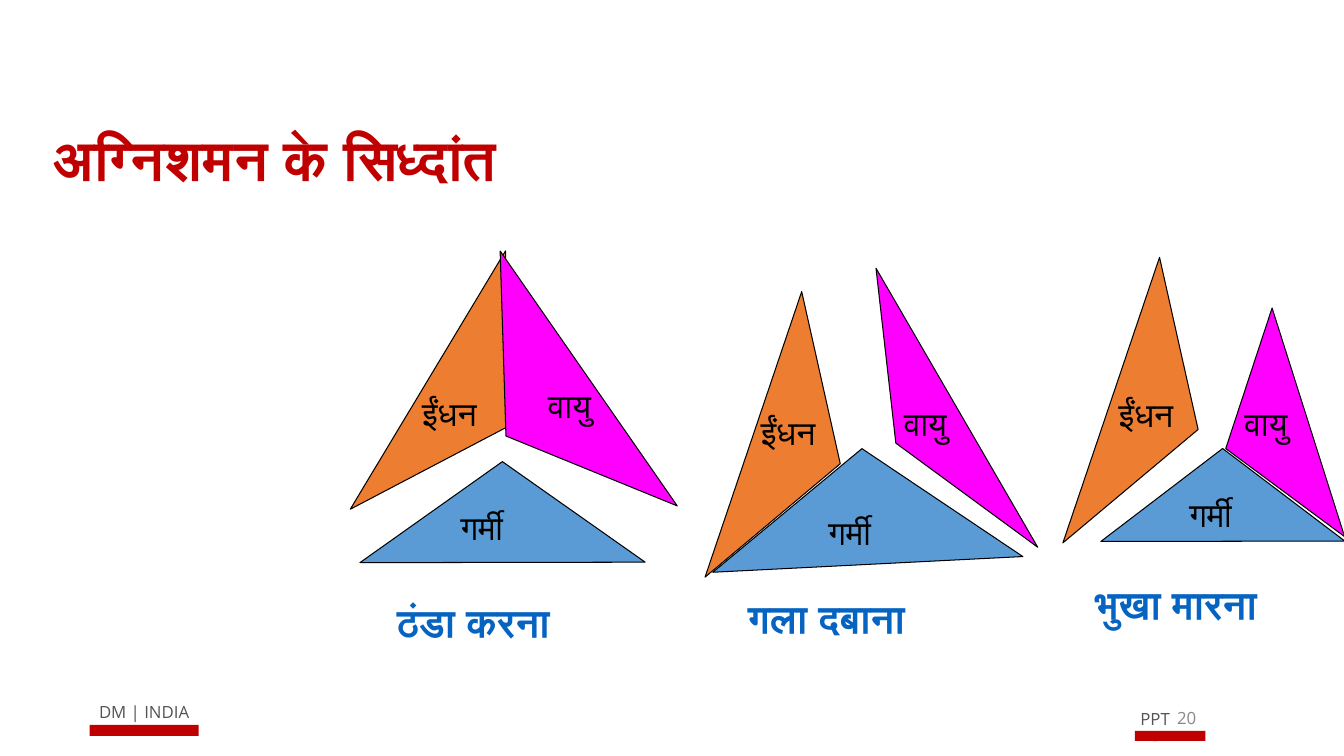
import pptx
import pptx.util
from collections import namedtuple
from dataclasses import dataclass
from pptx.dml.color import RGBColor
from pptx.enum.shapes import MSO_SHAPE
from pptx.enum.text import MSO_ANCHOR, PP_ALIGN

Box = namedtuple("Box", "left top width height")
Side = namedtuple("Side", "element box angle label_at")
Panel = namedtuple("Panel", "caption caption_box sides")

CELL = 0.1
COLUMNS, ROWS = 133.33, 75


@dataclass(frozen=True)
class Theme:
    """Colours, fonts and type sizes of the slide."""
    red: str = "C00000"
    blue: str = "0563C1"
    black: str = "000000"
    white: str = "FFFFFF"
    footer_grey: str = "535353"
    number_grey: str = "888888"
    heading_font: str = "Open Sans"
    label_font: str = "Roboto"
    title_size: int = 40
    caption_size: int = 28
    label_size: int = 24
    footer_size: int = 12
    outline: float = 0.75


THEME = Theme()
ELEMENTS = {
    "fuel": ("ईंधन", "ED7D31", 11.7),
    "air": ("वायु", "FF00FF", 8.3),
    "heat": ("गर्मी", "5B9BD5", 10.8),
}
PANELS = [
    Panel("ठंडा करना", Box(3.4, 34.9, 25, 5.7), [
        Side("heat", Box(0.7, 21.8, 28.3, 10), 359.9, (9.7, 25.8)),
        Side("fuel", Box(-3.6, 11.5, 29.9, 9.1), 121, (5.9, 14.5)),
        Side("air", Box(3.9, 11.4, 30.8, 10), 235.2, (18.4, 13.7)),
    ]),
    Panel("गला दबाना", Box(2.7, 34.5, 26.4, 5.7), [
        Side("fuel", Box(-6.4, 16, 29.9, 9.1), 108.7, (4, 16.4)),
        Side("air", Box(5.4, 14.7, 32, 7), 239.9, (18.2, 15.5)),
        Side("heat", Box(-0.1, 20.5, 30.8, 11.5), 357.1, (10.7, 26.3)),
    ]),
    Panel("भुखा मारना", Box(1.6, 33.1, 25.8, 5.7), [
        Side("fuel", Box(-6.4, 12.6, 29.9, 9.1), 108.7, (4, 14.6)),
        Side("heat", Box(3.2, 20.5, 24.2, 9.2), 359.9, (11, 24.5)),
        Side("air", Box(7.8, 14.9, 23.8, 8.6), 252.4, (16.5, 15.5)),
    ]),
]


def within(region, box):
    """Move a box into the region it is measured from."""
    return Box(region.left + box.left, region.top + box.top, box.width, box.height)


def emu(box):
    """Turn grid columns and rows into slide lengths."""
    return [pptx.util.Inches(cells * CELL) for cells in box]


def add_block(slide, kind, box, fill, outline=None, angle=0):
    """Draw one filled shape with an optional outline and rotation."""
    block = slide.shapes.add_shape(kind, *emu(box))
    block.shadow.inherit = False
    block.rotation = angle
    block.fill.solid()
    block.fill.fore_color.rgb = RGBColor.from_string(fill)
    if outline:
        block.line.color.rgb = RGBColor.from_string(outline)
        block.line.width = pptx.util.Pt(THEME.outline)
    else:
        block.line.fill.background()
    return block


def write(holder, text, size, color, font=THEME.heading_font, bold=False,
          align=PP_ALIGN.LEFT, anchor=MSO_ANCHOR.TOP):
    """Set one styled paragraph in a shape."""
    frame = holder.text_frame
    frame.word_wrap = True
    frame.vertical_anchor = anchor
    paragraph = frame.paragraphs[0]
    paragraph.text = text
    paragraph.alignment = align
    paragraph.font.size = pptx.util.Pt(size)
    paragraph.font.name = font
    paragraph.font.bold = bold
    paragraph.font.color.rgb = RGBColor.from_string(color)
    return frame


def add_text(slide, box, *args, **style):
    """Place a text box and write in it."""
    return write(slide.shapes.add_textbox(*emu(box)), *args, **style)


def add_footer_mark(slide, region, text, bar):
    """Place a footer text with its red bar."""
    frame = add_text(slide, region, text, THEME.footer_size, THEME.footer_grey,
                     align=PP_ALIGN.CENTER)
    frame.margin_left = frame.margin_right = pptx.util.Inches(0.09)
    frame.margin_top = frame.margin_bottom = pptx.util.Inches(0.09)
    add_block(slide, MSO_SHAPE.RECTANGLE, within(region, bar), THEME.red)


def add_title(slide, region):
    """Place the slide title on its white band."""
    band = add_block(slide, MSO_SHAPE.RECTANGLE, region, THEME.white)
    write(band, "अग्निशमन के सिध्दांत", THEME.title_size, THEME.red, bold=True)


def add_fire_triangle(slide, region, panel):
    """Draw one parted fire triangle with its labels and caption."""
    for side in panel.sides:
        add_block(slide, MSO_SHAPE.ISOSCELES_TRIANGLE, within(region, side.box),
                  ELEMENTS[side.element][1], THEME.black, side.angle)
    for side in panel.sides:
        name, _, width = ELEMENTS[side.element]
        add_text(slide, within(region, Box(*side.label_at, width, 5)), name,
                 THEME.label_size, THEME.black, font=THEME.label_font)
    add_text(slide, within(region, panel.caption_box), panel.caption,
             THEME.caption_size, THEME.blue, bold=True)


def main():
    """Build the slide and save it."""
    deck = pptx.Presentation()
    deck.slide_width, deck.slide_height = emu((COLUMNS, ROWS))
    slide = deck.slides.add_slide(deck.slide_layouts[6])
    add_footer_mark(slide, Box(2.4, 68.7, 23.8, 3.7), "DM | INDIA",
                    Box(6.5, 3.2, 10.8, 1.1))
    add_footer_mark(slide, Box(111.6, 69.4, 6, 3.7), "PPT\v-", Box(1, 3.1, 7, 1))
    add_title(slide, Box(4.3, 11.9, 53.2, 7.7))
    add_text(slide, Box(115.8, 69.2, 5, 4), "20", THEME.footer_size,
             THEME.number_grey, anchor=MSO_ANCHOR.MIDDLE)
    for index, panel in enumerate(PANELS):
        add_fire_triangle(slide, Box(35 + 35.5 * index, 24, 35.5, 41), panel)
    deck.save("out.pptx")


if __name__ == "__main__":
    main()
